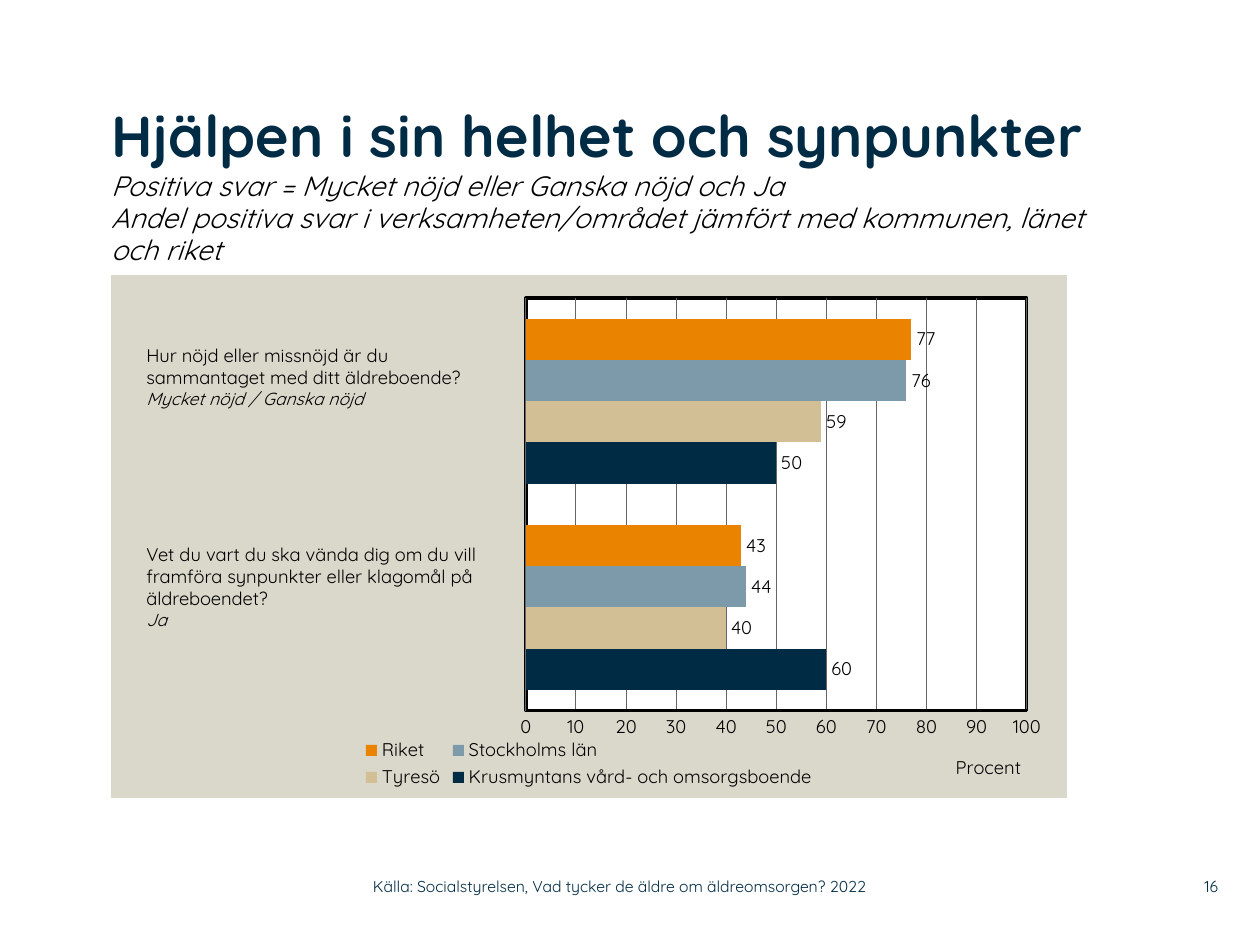
from dataclasses import dataclass

from lxml.etree import SubElement
from pptx import Presentation
from pptx.chart.data import CategoryChartData
from pptx.dml.color import RGBColor
from pptx.enum.chart import XL_CHART_TYPE, XL_LABEL_POSITION, XL_LEGEND_POSITION, XL_TICK_MARK
from pptx.enum.text import MSO_ANCHOR, PP_ALIGN
from pptx.oxml.ns import qn
from pptx.util import Emu, Pt


@dataclass(frozen=True)
class Theme:
    font: str = "Quicksand"
    navy: str = "002B45"
    black: str = "000000"
    white: str = "FFFFFF"
    panel: str = "DAD7CB"
    grid: str = "666666"
    title: float = 33
    subtitle: float = 16
    body: float = 10.5
    answer: float = 10
    footer: float = 9


THEME = Theme()
PX = 914400 // 126

TITLE = "Hjälpen i sin helhet och synpunkter"
SUBTITLE = [
    "Positiva svar = Mycket nöjd eller Ganska nöjd och Ja",
    "Andel positiva svar i verksamheten/området jämfört med kommunen, länet och riket",
]
QUESTIONS = [
    ((134, 338, 391, 102),
     ["Hur nöjd eller missnöjd är du", "sammantaget med ditt äldreboende?"],
     "Mycket nöjd / Ganska nöjd"),
    ((134, 537, 384, 102),
     ["Vet du vart du ska vända dig om du vill framföra synpunkter eller klagomål på äldreboendet?"],
     "Ja"),
]
SERIES = [
    ("Krusmyntans vård- och omsorgsboende", (60, 50), THEME.navy),
    ("Tyresö", (40, 59), "D3BF96"),
    ("Stockholms län", (44, 76), "7D9AAA"),
    ("Riket", (43, 77), "E98300"),
]
FOOTERS = [
    ((373, 868, 558, 37), "Källa: Socialstyrelsen, Vad tycker de äldre om äldreomsorgen? 2022", PP_ALIGN.LEFT),
    ((1159, 868, 59, 37), "16", PP_ALIGN.RIGHT),
]


def style(font, size, color=THEME.black, bold=False, italic=False):
    font.name, font.size, font.bold, font.italic = THEME.font, Pt(size), bold, italic
    font.color.rgb = RGBColor.from_string(color)


def paint(part, color):
    part.fill.solid()
    part.fill.fore_color.rgb = RGBColor.from_string(color)


def draw_line(line, color, width):
    line.color.rgb = RGBColor.from_string(color)
    line.width = Pt(width)


def add_box(page, place, inset=True, anchor=MSO_ANCHOR.TOP):
    frame = page.shapes.add_textbox(*(Emu(n * PX) for n in place)).text_frame
    frame.word_wrap = True
    frame.vertical_anchor = anchor
    if not inset:
        frame.margin_left = frame.margin_right = frame.margin_top = frame.margin_bottom = 0
    return frame


def set_layout(part, index, inner=False, **fractions):
    """Give a chart part a manual layout in fractions of the chart."""
    for old in part.findall(qn("c:layout")):
        part.remove(old)
    layout = SubElement(part, qn("c:layout"))
    part.insert(index, layout)
    manual = SubElement(layout, qn("c:manualLayout"))
    settings = {"layoutTarget": "inner"} if inner else {}
    settings |= {"xMode": "edge", "yMode": "edge"} | fractions
    for name, value in settings.items():
        SubElement(manual, qn(f"c:{name}")).set("val", str(value))


def add_title(page):
    frame = add_box(page, (111, 105, 982, 169), inset=False)
    para = frame.paragraphs[0]
    para.line_spacing = 0.95
    span = para.add_run()
    span.text = TITLE
    style(span.font, THEME.title, THEME.navy, bold=True)
    for text in SUBTITLE:
        para.add_line_break()
        span = para.add_run()
        span.text = text
        style(span.font, THEME.subtitle, italic=True)


def add_survey_chart(page):
    data = CategoryChartData()
    data.categories = ["1", "2"]
    for name, values, _ in SERIES:
        data.add_series(name, values)
    place = (Emu(n * PX) for n in (111, 275, 956, 523))
    chart = page.shapes.add_chart(XL_CHART_TYPE.BAR_CLUSTERED, *place, data).chart
    chart.has_title = False
    style(chart.font, THEME.body)

    plot = chart.plots[0]
    plot.gap_width, plot.overlap, plot.vary_by_categories = 100, 0, False
    plot.has_data_labels = True
    plot.data_labels.show_value = True
    plot.data_labels.position = XL_LABEL_POSITION.OUTSIDE_END
    for series, (_, _, color) in zip(plot.series, SERIES):
        paint(series.format, color)

    chart.category_axis.visible = False
    axis = chart.value_axis
    axis.minimum_scale, axis.maximum_scale, axis.major_unit = 0, 100, 10
    axis.major_tick_mark = XL_TICK_MARK.NONE
    draw_line(axis.format.line, THEME.black, 2)
    draw_line(axis.major_gridlines.format.line, THEME.grid, 0.5)
    caption = axis.axis_title.text_frame
    caption.text = "Procent"
    style(caption.paragraphs[0].font, THEME.body)
    set_layout(axis.axis_title._element, 1, x=0.88, y=0.91)

    chart.has_legend = True
    chart.legend.position = XL_LEGEND_POSITION.BOTTOM
    chart.legend.include_in_layout = False
    style(chart.legend.font, THEME.body)
    set_layout(chart.legend._element, 1, x=0.26, y=0.88, w=0.48, h=0.11)

    space = chart._chartSpace
    area = space.chart.plotArea
    set_layout(area, 0, inner=True, x=0.434, y=0.044, w=0.524, h=0.789)
    area_fill = add_area_format(area, len(area), THEME.white)
    outline = SubElement(area_fill, qn("a:ln"), w=str(Pt(2)))
    add_solid_fill(outline, THEME.black)
    add_area_format(space, space.index(space.chart) + 1, THEME.panel)


def add_solid_fill(parent, color):
    fill = SubElement(parent, qn("a:solidFill"))
    SubElement(fill, qn("a:srgbClr")).set("val", color)


def add_area_format(parent, index, color):
    properties = SubElement(parent, qn("c:spPr"))
    parent.insert(index, properties)
    add_solid_fill(properties, color)
    return properties


def add_question(page, place, lines, answer):
    frame = add_box(page, place)
    for number, text in enumerate([*lines, answer]):
        para = frame.paragraphs[0] if number == 0 else frame.add_paragraph()
        para.text = text
        is_answer = number == len(lines)
        style(para.font, THEME.answer if is_answer else THEME.body, italic=is_answer)


def main():
    deck = Presentation()
    deck.slide_width, deck.slide_height = Emu(1260 * PX), Emu(945 * PX)
    page = deck.slides.add_slide(deck.slide_layouts[6])
    add_title(page)
    add_survey_chart(page)
    for question in QUESTIONS:
        add_question(page, *question)
    for place, text, alignment in FOOTERS:
        para = add_box(page, place, inset=False, anchor=MSO_ANCHOR.MIDDLE).paragraphs[0]
        para.text, para.alignment = text, alignment
        style(para.font, THEME.footer, THEME.navy)
    deck.save("out.pptx")


if __name__ == "__main__":
    main()
